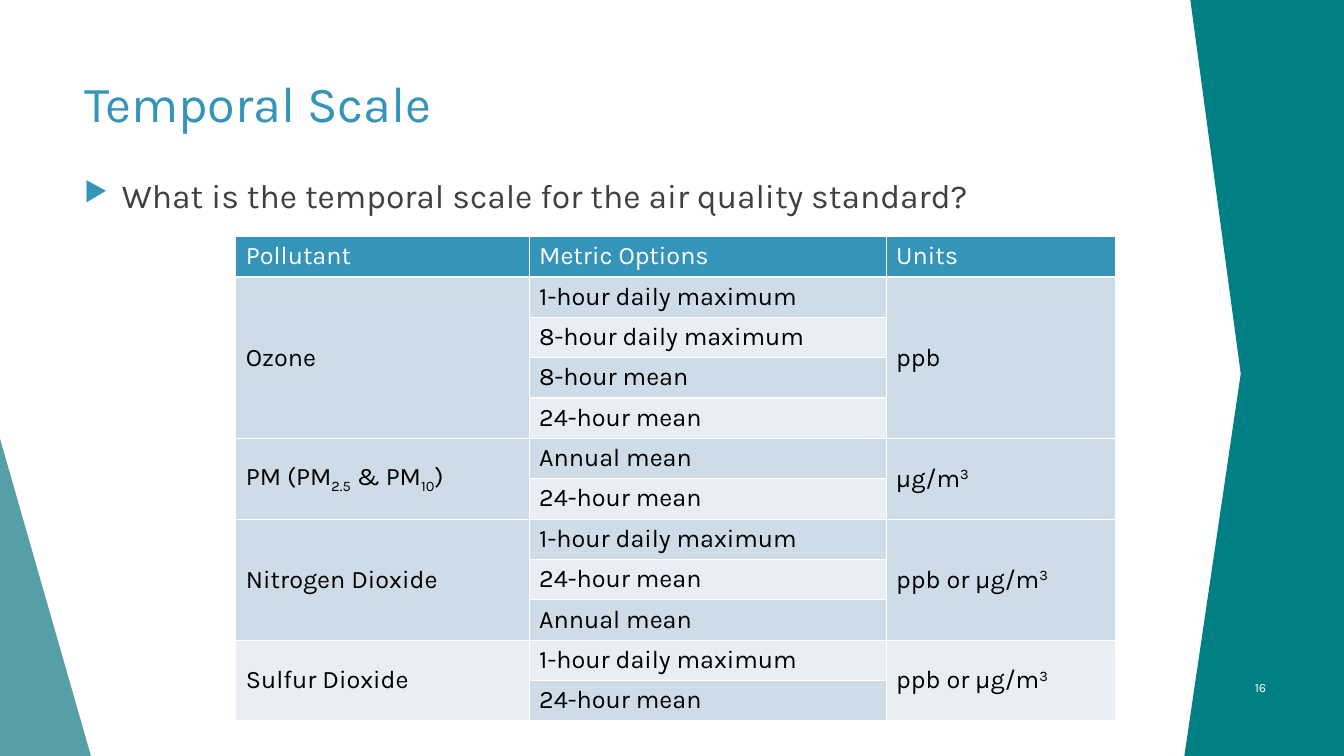
from lxml.etree import SubElement
from pptx import Presentation
from pptx.dml.color import RGBColor
from pptx.enum.shapes import MSO_SHAPE as Shape
from pptx.enum.text import MSO_ANCHOR as Anchor, PP_ALIGN as Align
from pptx.oxml import parse_xml
from pptx.oxml.ns import nsdecls, qn
from pptx.util import Pt

FONT = "Karla"
BLUE = RGBColor(0x34, 0x94, 0xBA)
TEAL = RGBColor(0x00, 0x80, 0x85)
SOFT_TEAL = RGBColor(0x3A, 0x8F, 0x98)
GREY = RGBColor(0x40, 0x40, 0x40)
BLACK = RGBColor(0, 0, 0)
WHITE = RGBColor(0xFF, 0xFF, 0xFF)
BANDS = (RGBColor(0xE8, 0xEE, 0xF3), RGBColor(0xCE, 0xDC, 0xE7))  # even, odd rows

SUB, SUPER = -25000, 30000
HEADINGS = ("Pollutant", "Metric Options", "Units")
COLUMN_WIDTHS = (209.5, 255, 164)
ROW_HEIGHT = 28.34
MICROGRAMS = [("µg/m", 0), ("3", SUPER)]
PPB_OR_MICROGRAMS = [("ppb or µg/m", 0), ("3", SUPER)]
PARTICLES = [("PM (PM", 0), ("2.5", SUB), (" & PM", 0), ("10", SUB), (")", 0)]
POLLUTANTS = [
    ([("Ozone", 0)],
     ["1-hour daily maximum", "8-hour daily maximum", "8-hour mean", "24-hour mean"],
     [("ppb", 0)]),
    (PARTICLES, ["Annual mean", "24-hour mean"], MICROGRAMS),
    ([("Nitrogen Dioxide", 0)],
     ["1-hour daily maximum", "24-hour mean", "Annual mean"],
     PPB_OR_MICROGRAMS),
    ([("Sulfur Dioxide", 0)],
     ["1-hour daily maximum", "24-hour mean"],
     PPB_OR_MICROGRAMS),
]


def style_runs(paragraph, size, color):
    for run in paragraph.runs:
        run.font.name = FONT
        run.font.size = Pt(size)
        run.font.color.rgb = color


def paint(shape, color):
    shape.shadow.inherit = False
    shape.fill.solid()
    shape.fill.fore_color.rgb = color
    shape.line.fill.background()


def add_side_shapes(slide):
    # Translucent wedge at the lower left
    wedge = slide.shapes.add_shape(
        Shape.RIGHT_TRIANGLE, Pt(-1.5), Pt(308), Pt(66.5), Pt(232))
    paint(wedge, SOFT_TEAL)
    tint = wedge.fill._xPr.find(qn("a:solidFill"))[0]
    SubElement(tint, qn("a:alpha")).set("val", "85000")

    # Angled band on the right
    outline = slide.shapes.build_freeform(Pt(960), Pt(0))
    corners = [(960, 540), (846, 540), (886.3, 267), (850.3, 0)]
    outline.add_line_segments([(Pt(x), Pt(y)) for x, y in corners])
    paint(outline.convert_to_shape(), TEAL)


def add_text(slide, text, left, top, width, height, size, color,
             align=Align.LEFT, anchor=Anchor.TOP, bullet=False):
    frame = slide.shapes.add_textbox(Pt(left), Pt(top), Pt(width), Pt(height)).text_frame
    frame.word_wrap = True
    frame.vertical_anchor = anchor
    frame.text = text
    paragraph = frame.paragraphs[0]
    paragraph.alignment = align
    if bullet:
        add_bullet(paragraph)
    style_runs(paragraph, size, color)


def add_bullet(paragraph):
    props = paragraph._p.get_or_add_pPr()
    props.set("marL", str(Pt(27)))
    props.set("indent", str(Pt(-27)))
    bullet_color = SubElement(props, qn("a:buClr"))
    SubElement(bullet_color, qn("a:srgbClr")).set("val", str(BLUE))
    SubElement(props, qn("a:buSzPct")).set("val", "80000")
    SubElement(props, qn("a:buChar")).set("char", "▶")


def format_cell(cell, color):
    cell.fill.solid()
    cell.fill.fore_color.rgb = color
    props = cell._tc.get_or_add_tcPr()
    for position, side in enumerate("LRTB"):
        border = parse_xml(
            f'<a:ln{side} {nsdecls("a")} w="{Pt(1)}"><a:solidFill>'
            f'<a:srgbClr val="{WHITE}"/></a:solidFill></a:ln{side}>')
        props.insert(position, border)


def fill_cell(cell, pieces, color, anchor=Anchor.TOP):
    paragraph = cell.text_frame.paragraphs[0]
    for text, baseline in pieces:
        run = paragraph.add_run()
        run.text = text
        if baseline:
            run._r.get_or_add_rPr().set("baseline", str(baseline))
    style_runs(paragraph, 18, color)
    cell.vertical_anchor = anchor


def add_standards_table(slide):
    row_count = 1 + sum(len(metrics) for _, metrics, _ in POLLUTANTS)
    table = slide.shapes.add_table(
        row_count, len(HEADINGS), Pt(168.5), Pt(169),
        Pt(sum(COLUMN_WIDTHS)), Pt(ROW_HEIGHT * row_count)).table
    for column, width in zip(table.columns, COLUMN_WIDTHS):
        column.width = Pt(width)
    for row in table.rows:
        row.height = Pt(ROW_HEIGHT)

    # Header row
    for index, heading in enumerate(HEADINGS):
        format_cell(table.cell(0, index), BLUE)
        fill_cell(table.cell(0, index), [(heading, 0)], WHITE)

    # One block of rows per pollutant; outer columns take the first row's band
    first = 1
    for pollutant, metrics, units in POLLUTANTS:
        for row, metric in enumerate(metrics, first):
            for index, banded_row in enumerate((first, row, first)):
                format_cell(table.cell(row, index), BANDS[banded_row % 2])
            fill_cell(table.cell(row, 1), [(metric, 0)], BLACK)
        last = first + len(metrics) - 1
        for index, pieces in ((0, pollutant), (2, units)):
            table.cell(first, index).merge(table.cell(last, index))
            fill_cell(table.cell(first, index), pieces, BLACK, Anchor.MIDDLE)
        first = last + 1


def main():
    deck = Presentation()
    deck.slide_width, deck.slide_height = Pt(960), Pt(540)
    slide = deck.slides.add_slide(deck.slide_layouts[6])

    add_side_shapes(slide)
    # Title and question
    add_text(slide, "Temporal Scale", 53, 48, 858, 104, 36, BLUE)
    add_text(slide, "What is the temporal scale for the air quality standard?",
             53, 121.5, 674, 52, 24, GREY, bullet=True)
    add_standards_table(slide)
    # Slide number
    add_text(slide, "16", 857.5, 476.5, 54, 29, 9, WHITE, Align.RIGHT, Anchor.MIDDLE)

    deck.save("out.pptx")


if __name__ == "__main__":
    main()
